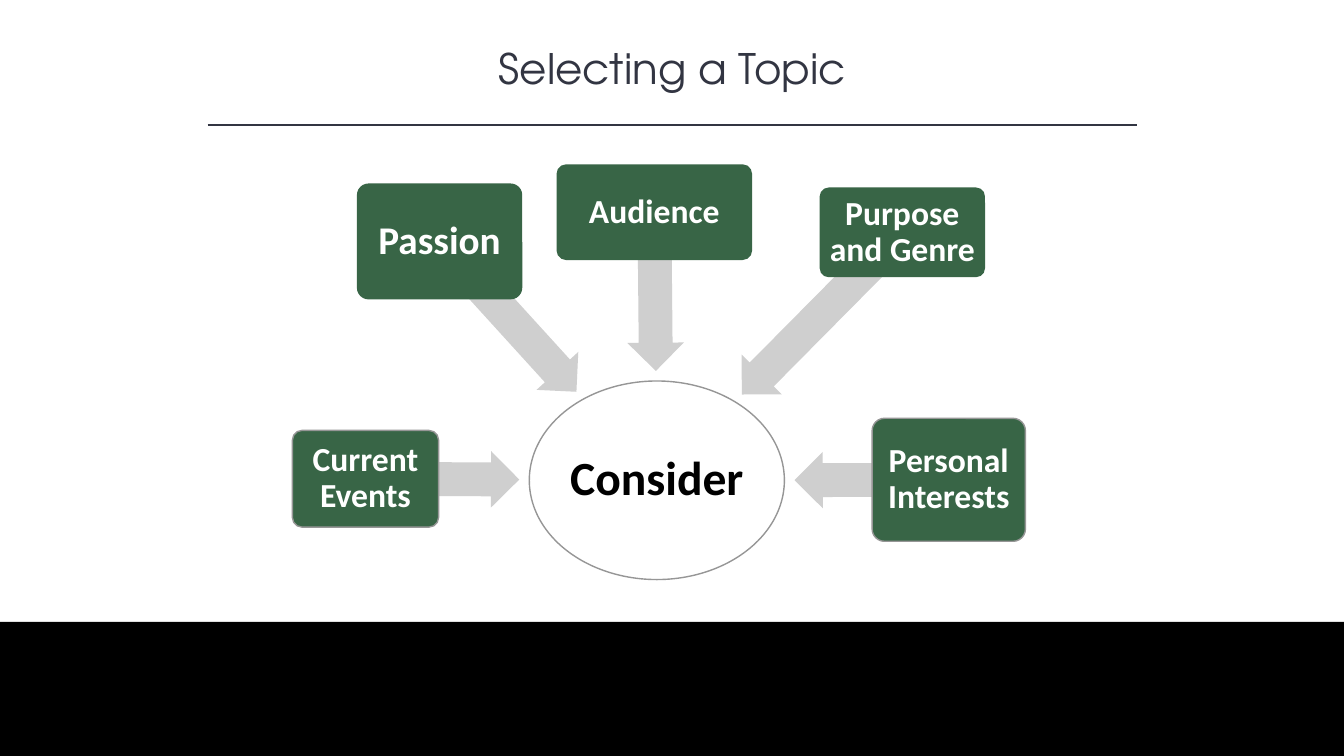
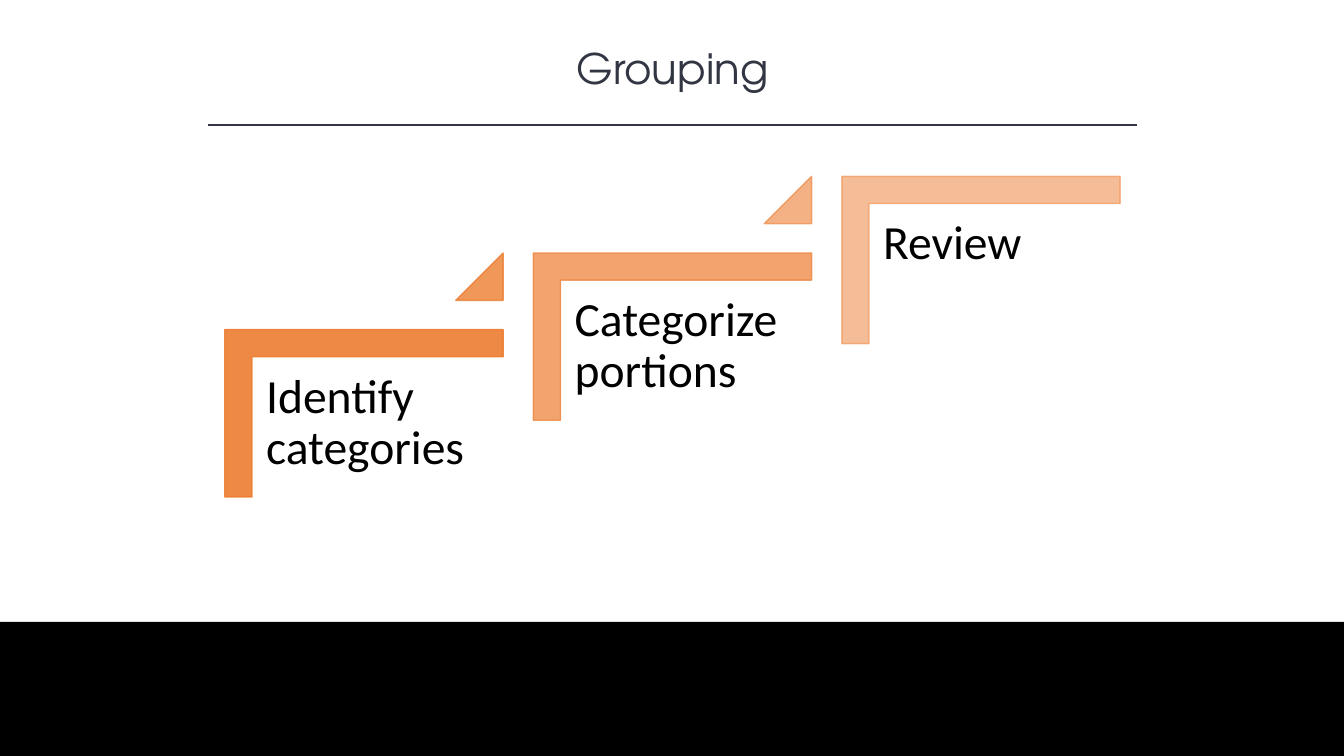
import math
from dataclasses import dataclass

import pptx
import pptx.dml.color
import pptx.enum.shapes
import pptx.enum.text
import pptx.oxml
import pptx.oxml.ns
import pptx.util
from lxml import etree

Inches = pptx.util.Inches
SHAPE = pptx.enum.shapes.MSO_SHAPE
ALIGN = pptx.enum.text.PP_ALIGN
ANCHOR = pptx.enum.text.MSO_ANCHOR
qn = pptx.oxml.ns.qn


@dataclass(frozen=True)
class Theme:
    width: float = 13.33
    height: float = 7.5
    ink: str = "323542"
    white: str = "FFFFFF"
    black: str = "000000"
    green: str = "386546"
    arrow: str = "CFCFCF"
    outline: str = "969696"
    orange: str = "ED7D31"
    title_font: str = "TeX Gyre Adventor"
    body_font: str = "Calibri"
    title_size: int = 30
    large_size: int = 34
    medium_size: int = 28
    small_size: int = 24


T = Theme()

TOPIC_TITLE = "Selecting a Topic"
HUB = ("Consider", (5.25, 3.78, 2.53, 1.97))
FACTORS = [
    ("Current Events", (2.9, 4.27, 1.45, 0.96), T.small_size, T.outline),
    ("Passion", (3.54, 1.82, 1.64, 1.15), T.medium_size, None),
    ("Audience", (5.52, 1.63, 1.94, 0.95), T.small_size, None),
    ("Purpose and Genre", (8.13, 1.86, 1.64, 0.89), T.small_size, None),
    ("Personal Interests", (8.65, 4.15, 1.52, 1.22), T.small_size, T.outline),
]
ARROW_WIDTH = 0.56
ARROW_GAP = 0.1

GROUPING_TITLE = "Grouping"
STEPS = ["Identify categories", "Categorize portions", "Review"]
FIRST_STEP = (2.23, 3.27)
STEP_SIZE = (2.76, 1.66)
STEP_PITCH = (3.06, -0.76)
STEP_BAR = 0.27
LABEL_OFFSET = (0.27, 0.28)
LABEL_SIZE = (2.5, 2.19)
TRIANGLE_SIDE = 0.47


def rgb(color):
    return pptx.dml.color.RGBColor.from_string(color)


def set_line(line, color):
    if color is None:
        line.fill.background()
    else:
        line.color.rgb = rgb(color)
        line.width = pptx.util.Pt(1)


def paint(sp, fill, line=None, opacity=100):
    sp.shadow.inherit = False
    sp.fill.solid()
    sp.fill.fore_color.rgb = rgb(fill)
    set_line(sp.line, line)
    if opacity < 100:
        for color in sp._element.spPr.iter(qn("a:srgbClr")):
            etree.SubElement(color, qn("a:alpha")).set("val", str(opacity * 1000))


def add_shape(s, kind, box, fill, line=None, rotation=0, adjust=(), opacity=100):
    sp = s.shapes.add_shape(kind, *map(Inches, box))
    sp.rotation = rotation
    for i, value in enumerate(adjust):
        sp.adjustments[i] = value
    paint(sp, fill, line, opacity)
    return sp


def add_text(sp, text, size, color, font=T.body_font, bold=False, align=ALIGN.LEFT,
             anchor=ANCHOR.TOP, inset=0.05, spacing=0.9):
    tf = sp.text_frame
    tf.word_wrap = True
    tf.vertical_anchor = anchor
    tf.margin_left = tf.margin_right = tf.margin_top = tf.margin_bottom = Inches(inset)
    p = tf.paragraphs[0]
    p.alignment = align
    p.line_spacing = spacing
    r = p.add_run()
    r.text = text
    r.font.name = font
    r.font.size = pptx.util.Pt(size)
    r.font.bold = bold
    r.font.color.rgb = rgb(color)


def add_base(prs, title):
    s = prs.slides.add_slide(prs.slide_layouts[6])
    sp = s.shapes.add_textbox(*map(Inches, (1.67, 0.37, 10, 0.61)))
    add_text(sp, title, T.title_size, T.ink, T.title_font, align=ALIGN.CENTER, spacing=1)
    rule = s.shapes.add_connector(pptx.enum.shapes.MSO_CONNECTOR.STRAIGHT,
                                  *map(Inches, (2.06, 1.24, 11.28, 1.24)))
    set_line(rule.line, T.ink)
    etree.SubElement(rule._element.spPr, qn("a:effectLst"))
    add_shape(s, SHAPE.RECTANGLE, (0, 6.17, T.width, T.height - 6.17), T.black)
    return s


def center(box):
    x, y, w, h = box
    return x + w / 2, y + h / 2


def add_arrow(s, box, hub):
    (x, y), (hub_x, hub_y) = center(box), center(hub)
    angle = math.atan2(hub_y - y, hub_x - x)
    cos, sin = math.cos(angle), math.sin(angle)
    radius = 1 / math.hypot(cos / (hub[2] / 2), sin / (hub[3] / 2))
    length = math.hypot(hub_x - x, hub_y - y) - radius - ARROW_GAP
    left = x + cos * length / 2 - length / 2
    top = y + sin * length / 2 - ARROW_WIDTH / 2
    add_shape(s, SHAPE.RIGHT_ARROW, (left, top, length, ARROW_WIDTH), T.arrow,
              rotation=math.degrees(angle), adjust=(0.6, 0.5))


def add_corner(s, x, y, opacity):
    w, h = STEP_SIZE
    outline = [(0, 0), (w, 0), (w, STEP_BAR), (STEP_BAR, STEP_BAR), (STEP_BAR, h), (0, h)]
    points = [(Inches(x + dx), Inches(y + dy)) for dx, dy in outline]
    builder = s.shapes.build_freeform(*points[0])
    builder.add_line_segments(points[1:], close=True)
    paint(builder.convert_to_shape(), T.orange, T.orange, opacity)


def build_topic(prs):
    s = add_base(prs, TOPIC_TITLE)
    centered = dict(bold=True, align=ALIGN.CENTER, anchor=ANCHOR.MIDDLE)
    text, hub = HUB
    sp = add_shape(s, SHAPE.OVAL, hub, T.white, T.outline)
    add_text(sp, text, T.large_size, T.black, inset=0.02, **centered)
    for text, box, size, line in FACTORS:
        add_arrow(s, box, hub)
        sp = add_shape(s, SHAPE.ROUNDED_RECTANGLE, box, T.green, line, adjust=(0.1,))
        add_text(sp, text, size, T.white, **centered)


def build_grouping(prs):
    s = add_base(prs, GROUPING_TITLE)
    for i, text in enumerate(STEPS):
        x, y = (start + i * pitch for start, pitch in zip(FIRST_STEP, STEP_PITCH))
        opacity = 90 - 20 * i
        add_corner(s, x, y, opacity)
        label = (x + LABEL_OFFSET[0], y + LABEL_OFFSET[1], *LABEL_SIZE)
        sp = s.shapes.add_textbox(*map(Inches, label))
        add_text(sp, text, T.large_size, T.black, inset=0.14)
        if i < len(STEPS) - 1:
            box = (x + STEP_SIZE[0] - TRIANGLE_SIDE, y + STEP_PITCH[1],
                   TRIANGLE_SIDE, TRIANGLE_SIDE)
            add_shape(s, SHAPE.ISOSCELES_TRIANGLE, box, T.orange, T.orange,
                      adjust=(1,), opacity=opacity - 10)


def main():
    prs = pptx.Presentation()
    prs.slide_width, prs.slide_height = Inches(T.width), Inches(T.height)
    build_topic(prs)
    build_grouping(prs)
    prs.save("out.pptx")


if __name__ == "__main__":
    main()
